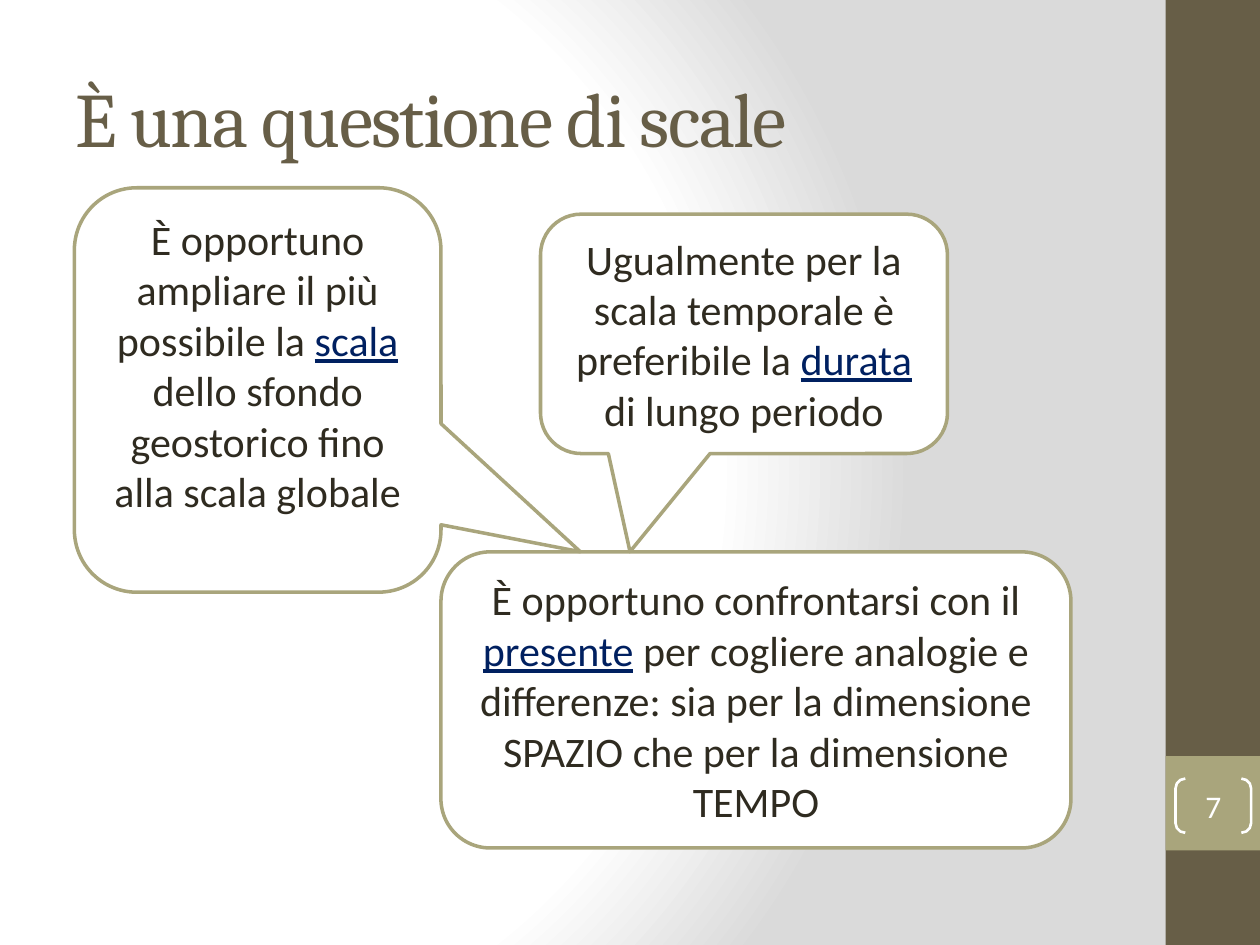
"""Build a slide on geohistorical scales with three linked speech bubbles."""
from dataclasses import dataclass

from pptx import Presentation, oxml
from pptx import util as u
from pptx.dml.color import RGBColor
from pptx.enum import shapes, text
from pptx.oxml.ns import nsdecls


@dataclass(frozen=True)
class Theme:
    white: str = "FFFFFF"
    grey: str = "DADADA"
    brown: str = "675E47"
    olive: str = "A9A57C"
    ink: str = "2F2B20"
    navy: str = "002060"
    heading: str = "Cambria"
    body: str = "Calibri"
    title_size: int = 44
    body_size: int = 24
    number_size: int = 18


theme = Theme()
kinds = shapes.MSO_SHAPE
deck = Presentation()
deck.slide_width, deck.slide_height = u.Inches(10), u.Inches(7.5)
slide = deck.slides.add_slide(deck.slide_layouts[5])


def add_box(kind, place, fill=None, line=None, width=2):
    box = slide.shapes.add_shape(kind, *map(u.Inches, place))
    box.shadow.inherit = False
    for part, color in ((box.fill, fill), (box.line.fill, line)):
        if color:
            part.solid()
            part.fore_color.rgb = RGBColor.from_string(color)
        else:
            part.background()
    if line:
        box.line.width = u.Pt(width)
    return box


def style(font, name, size, color):
    font.name, font.size = name, u.Pt(size)
    font.color.rgb = RGBColor.from_string(color)


stops = "".join(
    f'<a:gs pos="{share * 1000}"><a:srgbClr val="{color}"/></a:gs>'
    for share, color in ((0, theme.white), (75, theme.white), (100, theme.grey))
)
slide.element.cSld.insert(0, oxml.parse_xml(
    f'<p:bg {nsdecls("p", "a")}><p:bgPr><a:gradFill rotWithShape="1">'
    f'<a:gsLst>{stops}</a:gsLst><a:path path="circle">'
    '<a:fillToRect l="20000" t="50000" r="100000" b="50000"/></a:path>'
    '</a:gradFill><a:effectLst/></p:bgPr></p:bg>'
))

add_box(kinds.RECTANGLE, (9.25, 0, 0.75, 7.5), theme.brown)
add_box(kinds.RECTANGLE, (9.25, 6, 0.75, 0.75), theme.olive)

title = slide.shapes.title
title.left, title.top, title.width, title.height = map(u.Inches, (0.5, 0.3, 8.33, 1.25))
title.text_frame.text = "È una questione di scale"
title.text_frame.vertical_anchor = text.MSO_ANCHOR.MIDDLE
para = title.text_frame.paragraphs[0]
para.alignment = text.PP_ALIGN.LEFT
style(para.font, theme.heading, theme.title_size, theme.brown)
para.runs[0].font._element.set("spc", "-100")

number = add_box(kinds.DOUBLE_BRACKET, (9.33, 6.18, 0.6, 0.43), line=theme.white, width=1.5)
number.adjustments[0] = 0.18
frame = number.text_frame
frame.margin_left = frame.margin_right = frame.margin_top = frame.margin_bottom = 0
frame.vertical_anchor = text.MSO_ANCHOR.MIDDLE
frame.text = "7"
para = frame.paragraphs[0]
para.alignment = text.PP_ALIGN.CENTER
style(para.font, theme.body, theme.number_size, theme.white)

bubbles = (
    (kinds.ROUNDED_RECTANGLE, (3.5, 4.38, 5, 2.35), (), 0.05,
     ("È opportuno confrontarsi con il ", "presente",
      " per cogliere analogie e differenze: sia per la dimensione SPAZIO"
      " che per la dimensione TEMPO")),
    (kinds.ROUNDED_RECTANGULAR_CALLOUT, (4.29, 1.7, 3.23, 1.9), (-0.28, 0.91, 0.17), 0.05,
     ("Ugualmente per la scala temporale è preferibile la ", "durata",
      " di lungo periodo")),
    (kinds.ROUNDED_RECTANGULAR_CALLOUT, (0.59, 1.49, 2.91, 3.21), (0.88, 0.4, 0.17), 0.45,
     ("È opportuno ampliare il più possibile la ", "scala",
      " dello sfondo geostorico fino alla scala globale")),
)
for kind, place, adjustments, bottom, words in bubbles:
    bubble = add_box(kind, place, theme.white, theme.olive)
    for index, value in enumerate(adjustments):
        bubble.adjustments[index] = value
    frame = bubble.text_frame
    frame.word_wrap = True
    frame.margin_bottom = u.Inches(bottom)
    frame.vertical_anchor = text.MSO_ANCHOR.MIDDLE
    para = frame.paragraphs[0]
    para.alignment = text.PP_ALIGN.CENTER
    for wording, color in zip(words, (theme.ink, theme.navy, theme.ink)):
        span = para.add_run()
        span.text = wording
        style(span.font, theme.body, theme.body_size, color)
        span.font.underline = color == theme.navy

deck.save("out.pptx")
